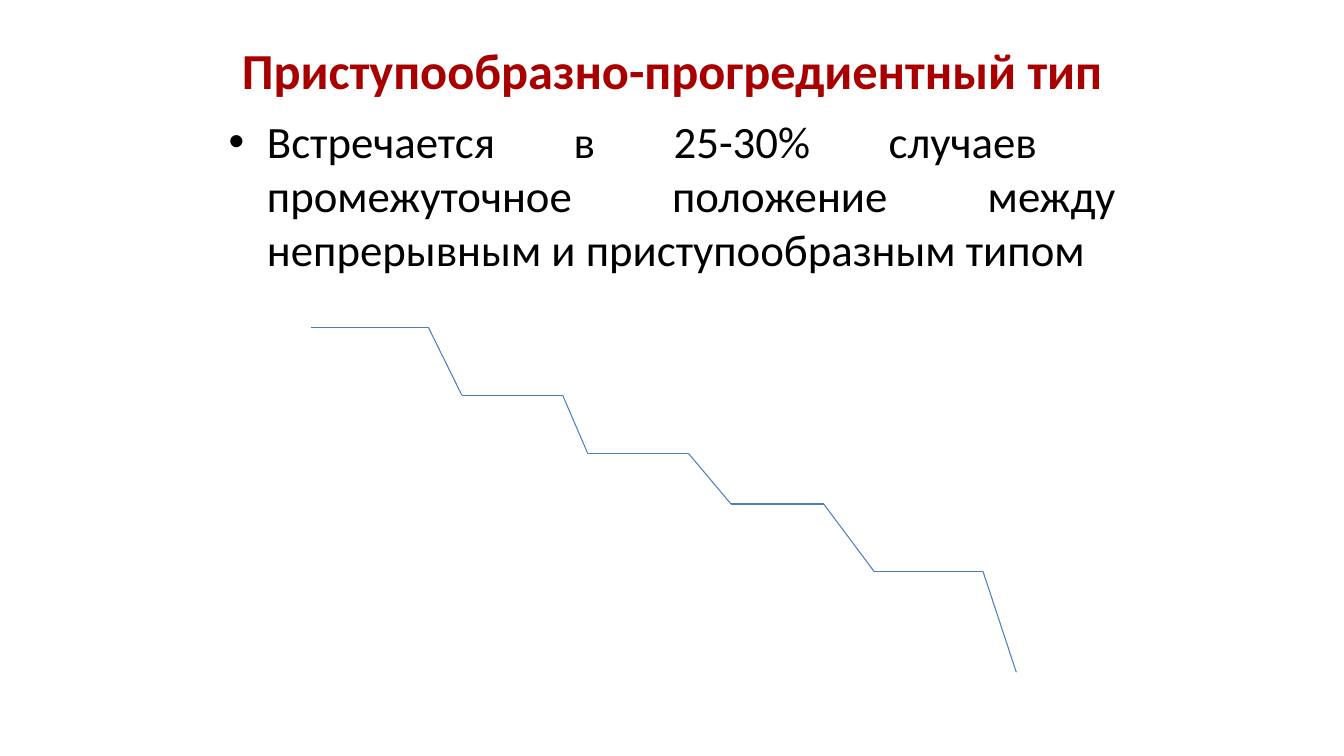
from itertools import pairwise

from lxml import etree
from pptx import Presentation
from pptx.dml.color import RGBColor
from pptx.enum.shapes import MSO_CONNECTOR
from pptx.enum.text import MSO_ANCHOR, PP_ALIGN
from pptx.oxml.ns import qn
from pptx.util import Inches, Pt

STRAIGHT = MSO_CONNECTOR.STRAIGHT
TOP, MIDDLE = MSO_ANCHOR.TOP, MSO_ANCHOR.MIDDLE
CENTER, JUSTIFY = PP_ALIGN.CENTER, PP_ALIGN.JUSTIFY

RED = RGBColor(0xA8, 0x00, 0x00)
BLACK = RGBColor(0x00, 0x00, 0x00)
BLUE = RGBColor(0x4B, 0x7E, 0xBC)

LEFT, WIDTH = 2.17, 9
# Start and end of each plateau, and its height on the slide
PLATEAUS = [
    (3.08, 4.25, 3.25),
    (4.58, 5.58, 3.92),
    (5.83, 6.83, 4.5),
    (7.25, 8.17, 5),
    (8.67, 9.75, 5.67),
]
LAST_POINT = (10.08, 6.67)


class SlideBuilder:
    font = "Calibri"
    line_width = Pt(0.75)

    def __init__(self, s):
        self.s = s

    def text(self, text, top, height, *, size, color, align,
             bold=False, anchor=TOP, bullet_indent=None):
        sp = self.s.shapes.add_textbox(
            Inches(LEFT), Inches(top), Inches(WIDTH), Inches(height))
        tf = sp.text_frame
        tf.word_wrap = True
        tf.vertical_anchor = anchor
        p = tf.paragraphs[0]
        p.alignment = align
        if bullet_indent:
            self.bullet(p, bullet_indent)
        r = p.add_run()
        r.text = text
        r.font.name = self.font
        r.font.size = Pt(size)
        r.font.bold = bold
        r.font.color.rgb = color

    def bullet(self, p, indent):
        pPr = p._p.get_or_add_pPr()
        pPr.set("marL", str(Inches(indent)))
        pPr.set("indent", str(-Inches(indent)))
        etree.SubElement(pPr, qn("a:buFont")).set("typeface", "Arial")
        etree.SubElement(pPr, qn("a:buChar")).set("char", "•")

    def polyline(self, points):
        """Join consecutive points with straight connectors."""
        for start, end in pairwise(points):
            line = self.s.shapes.add_connector(
                STRAIGHT, *map(Inches, start + end))
            line.line.color.rgb = BLUE
            line.line.width = self.line_width
            etree.SubElement(line._element.spPr, qn("a:effectLst"))


def main():
    prs = Presentation()
    prs.slide_width, prs.slide_height = Inches(13.33), Inches(7.5)
    slide = SlideBuilder(prs.slides.add_slide(prs.slide_layouts[6]))

    slide.text("Приступообразно-прогредиентный тип", 0.3, 0.78,
               size=36, color=RED, align=CENTER, bold=True, anchor=MIDDLE)
    slide.text("Встречается в 25-30% случаев  промежуточное положение "
               "между непрерывным и приступообразным типом", 1.08, 5.62,
               size=32, color=BLACK, align=JUSTIFY, bullet_indent=0.38)

    steps = [(x, y) for start, end, y in PLATEAUS for x in (start, end)]
    slide.polyline(steps + [LAST_POINT])
    prs.save("out.pptx")


if __name__ == "__main__":
    main()
